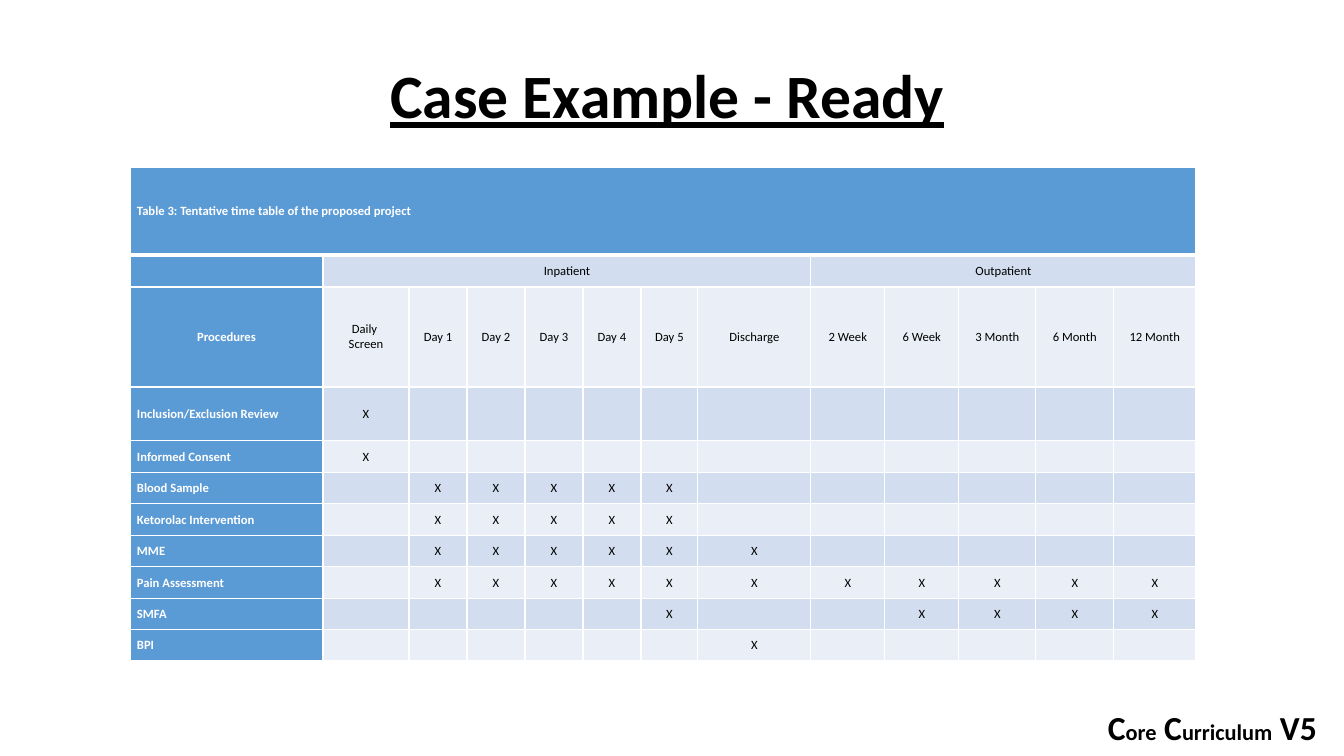
from dataclasses import dataclass

from lxml.etree import SubElement
from pptx import Presentation
from pptx.dml.color import RGBColor
from pptx.enum.text import MSO_ANCHOR as Anchor, MSO_AUTO_SIZE as Fit, PP_ALIGN as Align
from pptx.oxml import parse_xml
from pptx.oxml.ns import nsdecls, qn
from pptx.util import Emu, Pt

SCALE = 12192000 / 1344
FONT = "Calibri"
BLACK = RGBColor(0x00, 0x00, 0x00)
WHITE = RGBColor(0xFF, 0xFF, 0xFF)
BLUE = RGBColor(0x5B, 0x9B, 0xD5)
BANDS = (RGBColor(0xD2, 0xDE, 0xEF), RGBColor(0xEA, 0xEF, 0xF7))
SIZE = 9

COLS = (193, 86, 58, 58, 58, 58, 57, 113, 74, 74, 77, 78, 82)
ROWS = (88, 32, 100, 54, *(32, 31) * 3, 31)
VISITS = (
    "Daily \nScreen", "Day 1", "Day 2", "Day 3", "Day 4", "Day 5", "Discharge",
    "2 Week", "6 Week", "3 Month", "6 Month", "12 Month",
)


@dataclass(frozen=True)
class Step:
    name: str
    marks: str


@dataclass(frozen=True)
class Box:
    left: int
    top: int
    width: int
    height: int


@dataclass(frozen=True)
class Piece:
    text: str
    size: int


STEPS = (
    Step("Inclusion/Exclusion Review", "X-----------"),
    Step("Informed Consent", "X-----------"),
    Step("Blood Sample", "-XXXXX------"),
    Step("Ketorolac Intervention", "-XXXXX------"),
    Step("MME", "-XXXXXX-----"),
    Step("Pain Assessment", "-XXXXXXXXXXX"),
    Step("SMFA", "-----X--XXXX"),
    Step("BPI", "------X-----"),
)
TITLE = (Piece("Case Example - Ready", 44),)
FOOTER = (
    Piece("C", 24), Piece("ore", 16), Piece(" C", 24),
    Piece("urriculum", 16), Piece(" V5", 24),
)


def px(value: int) -> Emu:
    return Emu(round(value * SCALE))


def apply(target, style: dict) -> None:
    for name, value in style.items():
        setattr(target, name, value)


def paint(font, color: RGBColor, size: int, bold: bool, line: bool = False) -> None:
    apply(font, {"name": FONT, "size": Pt(size), "bold": bold, "underline": line})
    font.color.rgb = color


def add_text(slide, box: Box, pieces: tuple[Piece, ...], frame: dict, para: dict,
             line: bool = False) -> None:
    shape = slide.shapes.add_textbox(px(box.left), px(box.top), px(box.width), px(box.height))
    apply(shape.text_frame, frame)
    first = shape.text_frame.paragraphs[0]
    apply(first, para)
    for piece in pieces:
        run = first.add_run()
        run.text = piece.text
        paint(run.font, BLACK, piece.size, True, line)


def add_edges(cell, row: int) -> None:
    props = cell._tc.get_or_add_tcPr()
    thick = {"L": 1, "R": 1, "T": 3 if row == 1 else 1, "B": 3 if row == 0 else 1}
    for spot, (side, width) in enumerate(thick.items()):
        props.insert(spot, parse_xml(
            f'<a:ln{side} {nsdecls("a")} w="{Pt(width)}"><a:solidFill>'
            f'<a:srgbClr val="{WHITE}"/></a:solidFill></a:ln{side}>'
        ))


def fill_cell(cell, text: str, row: int, col: int) -> None:
    head = row == 0 or col == 0
    cell.fill.solid()
    cell.fill.fore_color.rgb = BLUE if head else BANDS[(row - 1) % 2]
    apply(cell, {
        "margin_left": px(7), "margin_right": px(7), "margin_top": 0,
        "margin_bottom": 0, "vertical_anchor": Anchor.MIDDLE,
    })
    add_edges(cell, row)
    para = cell.text_frame.paragraphs[0]
    para.text = text
    para.alignment = Align.CENTER if row == 2 or not head else Align.LEFT
    for run in para.runs:
        paint(run.font, WHITE if head else BLACK, SIZE, head)
    for mark in para._p.findall(qn("a:br")):
        SubElement(mark, qn("a:rPr"), sz=str(SIZE * 100))
    if not text:
        SubElement(para._p, qn("a:endParaRPr"), sz=str(SIZE * 100))


def add_plan(slide) -> None:
    grid = [
        ["Table 3: Tentative time table of the proposed project"] + [""] * 12,
        ["", "Inpatient"] + [""] * 6 + ["Outpatient"] + [""] * 4,
        ["Procedures", *VISITS],
    ]
    grid += [[step.name, *step.marks.replace("-", " ")] for step in STEPS]
    table = slide.shapes.add_table(
        len(ROWS), len(COLS), px(130), px(167), px(sum(COLS)), px(sum(ROWS))
    ).table
    apply(table, {"first_row": False, "horz_banding": False})
    for col, width in zip(table.columns, COLS):
        col.width = px(width)
    for row, height in zip(table.rows, ROWS):
        row.height = px(height)
    for row, texts in enumerate(grid):
        for col, text in enumerate(texts):
            fill_cell(table.cell(row, col), text.lstrip(), row, col)
    for row, start, end in ((0, 0, 12), (1, 1, 7), (1, 8, 12)):
        table.cell(row, start).merge(table.cell(row, end))


def main() -> None:
    deck = Presentation()
    apply(deck, {"slide_width": px(1344), "slide_height": px(756)})
    slide = deck.slides.add_slide(deck.slide_layouts[6])
    add_text(slide, Box(1098, 702, 237, 50), FOOTER,
             {"word_wrap": False, "auto_size": Fit.SHAPE_TO_FIT_TEXT}, {"alignment": Align.LEFT})
    add_text(slide, Box(88, 25, 1159, 148), TITLE,
             {"word_wrap": True, "vertical_anchor": Anchor.MIDDLE},
             {"alignment": Align.CENTER, "line_spacing": 0.9}, True)
    add_plan(slide)
    deck.save("out.pptx")


if __name__ == "__main__":
    main()
